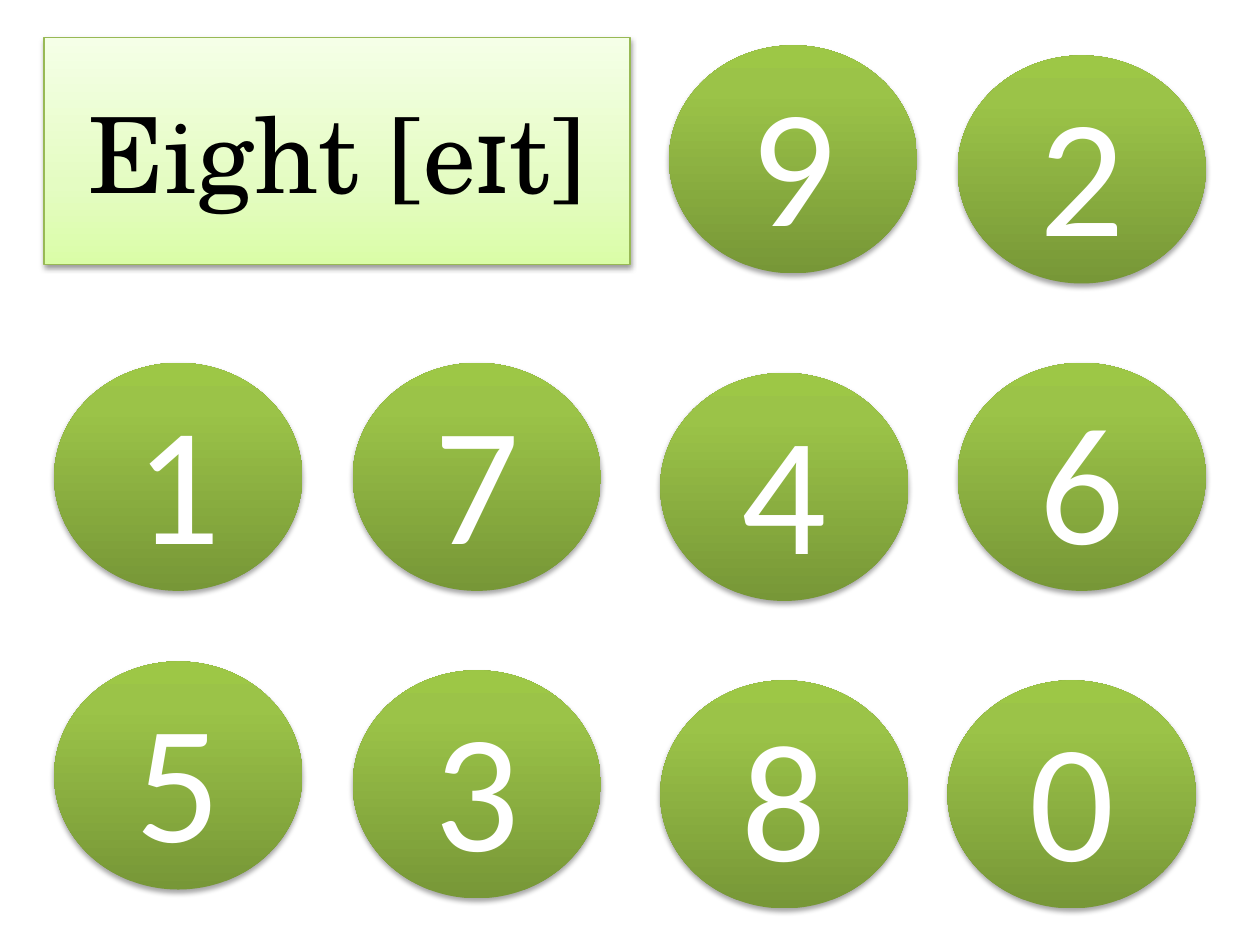
from dataclasses import dataclass

from lxml.etree import SubElement
from pptx import Presentation
from pptx.dml.color import RGBColor
from pptx.enum.shapes import MSO_SHAPE
from pptx.enum.text import MSO_ANCHOR, MSO_AUTO_SIZE, PP_ALIGN
from pptx.oxml.ns import qn
from pptx.util import Inches, Pt


@dataclass(frozen=True)
class Theme:
    # Gradient stops run from the bottom edge to the top: (percent, colour)
    card_stops: tuple = ((0, "DAFDA7"), (35, "E4FCC2"), (100, "F5FFE7"))
    ball_stops: tuple = ((0, "779737"), (80, "9BC348"), (100, "9DC746"))
    card_line: str = "98B955"
    word_color: str = "000000"
    digit_color: str = "FFFFFF"
    shadow_color: str = "000000"
    word_font: str = "TeX Gyre Schola"
    digit_font: str = "Calibri"
    word_size: int = 60
    digit_size: int = 96


THEME = Theme()
BALL_WIDTH, BALL_HEIGHT = 1.97, 1.81

# digit, left, top: the balls are scattered slightly off a regular grid
BALLS = (
    ("2", 7.6, 0.44),
    ("1", 0.43, 2.88),
    ("7", 2.8, 2.88),
    ("4", 5.24, 2.96),
    ("6", 7.6, 2.88),
    ("5", 0.43, 5.25),
    ("3", 2.8, 5.32),
    ("8", 5.24, 5.4),
    ("0", 7.52, 5.4),
    ("9", 5.31, 0.36),
)


def fill_upward(shape, stops):
    """Fill with a gradient whose first stop is at the bottom edge."""
    shape.fill.gradient()
    shape.fill.gradient_angle = 90
    stop_list = shape._element.spPr.find(qn("a:gradFill")).find(qn("a:gsLst"))
    for default_stop in list(stop_list):
        stop_list.remove(default_stop)
    for percent, color in stops:
        stop = SubElement(stop_list, qn("a:gs"), pos=str(percent * 1000))
        SubElement(stop, qn("a:srgbClr"), val=color)


def drop_shadow(shape, opacity, distance):
    """Cast a soft shadow straight down."""
    shape.shadow.inherit = False
    effects = shape._element.spPr.find(qn("a:effectLst"))
    shadow = SubElement(
        effects, qn("a:outerShdw"), blurRad=str(Pt(3.1)),
        dist=str(Pt(distance)), dir="5400000", rotWithShape="0")
    color = SubElement(shadow, qn("a:srgbClr"), val=THEME.shadow_color)
    SubElement(color, qn("a:alpha"), val=str(opacity * 1000))


def write_centred(shape, text, font_name, size, color):
    frame = shape.text_frame
    frame.word_wrap = True
    frame.auto_size = MSO_AUTO_SIZE.NONE
    frame.vertical_anchor = MSO_ANCHOR.MIDDLE
    paragraph = frame.paragraphs[0]
    paragraph.alignment = PP_ALIGN.CENTER
    run = paragraph.add_run()
    run.text = text
    run.font.name = font_name
    run.font.size = Pt(size)
    run.font.color.rgb = RGBColor.from_string(color)


def format_word_card(card, word):
    card.left, card.top = Inches(0.35), Inches(0.3)
    card.width, card.height = Inches(4.65), Inches(1.8)
    fill_upward(card, THEME.card_stops)
    card.line.color.rgb = RGBColor.from_string(THEME.card_line)
    card.line.width = Pt(0.75)
    drop_shadow(card, opacity=38, distance=1.6)
    write_centred(card, word, THEME.word_font, THEME.word_size,
                  THEME.word_color)


def add_ball(slide, digit, left, top):
    ball = slide.shapes.add_shape(
        MSO_SHAPE.OVAL, Inches(left), Inches(top),
        Inches(BALL_WIDTH), Inches(BALL_HEIGHT))
    fill_upward(ball, THEME.ball_stops)
    ball.line.fill.background()
    drop_shadow(ball, opacity=35, distance=1.8)
    write_centred(ball, digit, THEME.digit_font, THEME.digit_size,
                  THEME.digit_color)


def main():
    deck = Presentation()
    deck.slide_width, deck.slide_height = Inches(10), Inches(7.5)
    title_only = deck.slide_layouts[5]
    slide = deck.slides.add_slide(title_only)
    format_word_card(slide.shapes.title, "Eight [eɪt]")
    for digit, left, top in BALLS:
        add_ball(slide, digit, left, top)
    deck.save("out.pptx")


if __name__ == "__main__":
    main()
